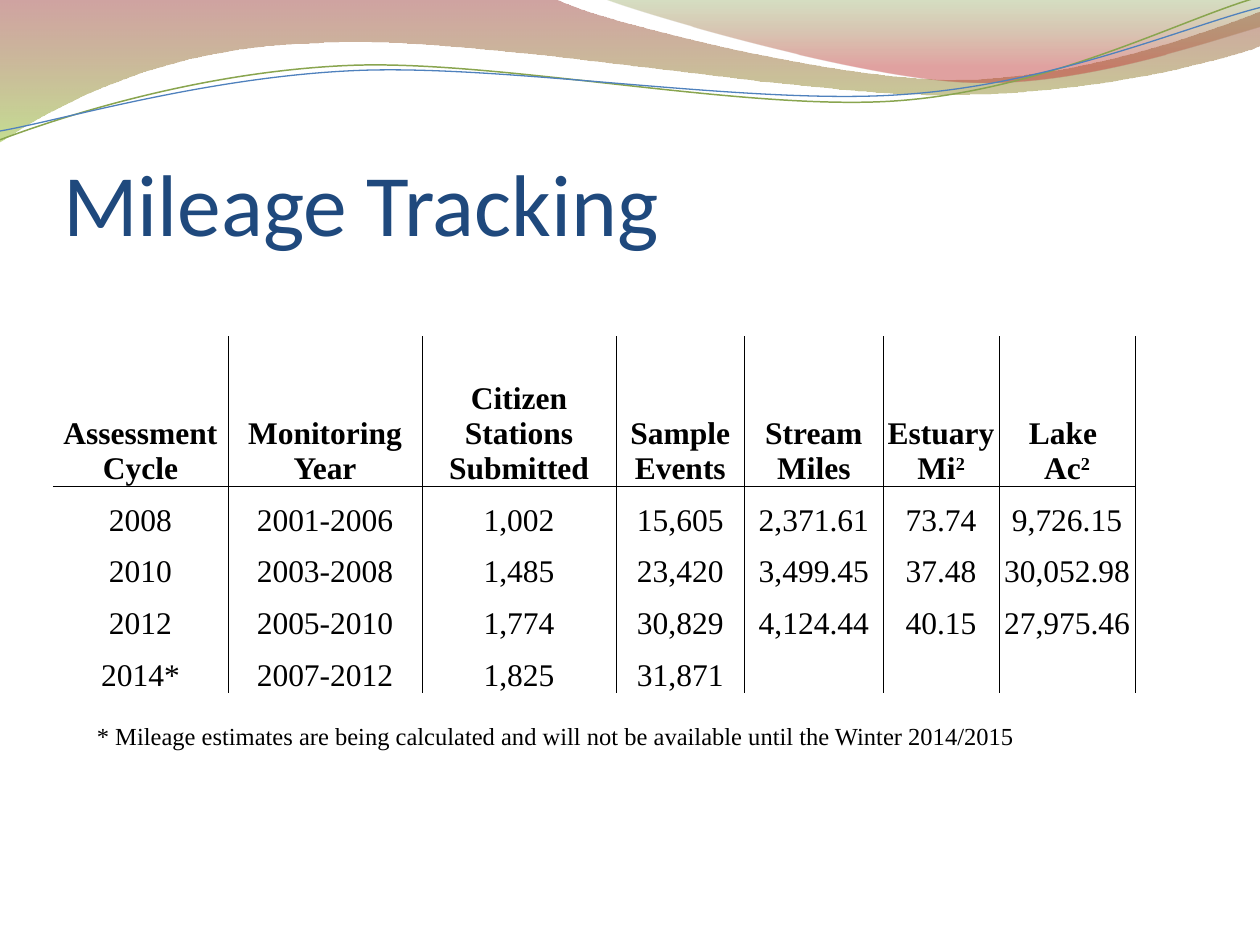
from lxml import etree
from pptx import Presentation
from pptx.dml.color import RGBColor
from pptx.enum import text
from pptx.oxml import ns
from pptx.util import Inches, Pt

NAVY = RGBColor(0x1F, 0x49, 0x7D)
BLACK = RGBColor(0, 0, 0)
MAROON = RGBColor(0x97, 0x33, 0x30)
LIME = RGBColor(0x95, 0xC2, 0x38)
OLIVE = RGBColor(0x76, 0x95, 0x37)
RED = RGBColor(0xBE, 0x33, 0x30)
GREEN = RGBColor(0x89, 0xA5, 0x4F)
BLUE = RGBColor(0x4F, 0x81, 0xBD)
SERIF = "Times New Roman"
NO_GRID = "{2D5ABB26-0587-4C30-8999-92F81FD0307C}"

# Each band or line is a start point, then points (2 numbers) or curves (6)
LEFT_BAND = [(0, 0), (4.4, -0.01), (4.76, 0.17, 6.64, 0.63, 7.58, 0.63),
             (8.53, 0.63, 9.58, 0.26, 10, 0.09), (10.01, 0.36),
             (9.83, 0.44, 8.7, 0.76, 7.46, 0.75),
             (6.22, 0.75, 3.82, 0.28, 2.57, 0.34),
             (1.29, 0.36, 0.46, 0.83, -0.01, 1.13)]
RIGHT_BAND = [(4.79, -0.01), (5.09, 0.11, 6.82, 0.62, 7.69, 0.65),
              (8.56, 0.69, 9.61, 0.32, 10, 0.21), (10, 0)]
GREEN_LINE = [(0, 1.11), (0.48, 0.93, 1.58, 0.57, 2.77, 0.52),
              (3.95, 0.47, 5.93, 0.89, 7.13, 0.8),
              (8.33, 0.71, 9.38, 0.15, 9.98, -0.02)]
BLUE_LINE = [(0, 1.04), (0.47, 0.96, 1.64, 0.61, 2.83, 0.56),
             (4.03, 0.51, 5.97, 0.84, 7.17, 0.75),
             (8.36, 0.67, 9.41, 0.21, 10, 0.06)]

# A caret marks the superscript that ends a line
ROWS = [
    ["Assessment Cycle", "Monitoring Year", "Citizen Stations Submitted",
     "Sample Events", "Stream Miles", "Estuary Mi^2", "Lake \nAc^2"],
    ["2008", "2001-2006", "1,002", "15,605", "2,371.61", "73.74", "9,726.15"],
    ["2010", "2003-2008", "1,485", "23,420", "3,499.45", "37.48", "30,052.98"],
    ["2012", "2005-2010", "1,774", "30,829", "4,124.44", "40.15", "27,975.46"],
    ["2014*", "2007-2012", "1,825", "31,871", "", "", ""],
]
WIDTHS = [1.39, 1.54, 1.54, 1.02, 1.1, 0.92, 1.08]
HEIGHTS = [1.19] + [0.41] * 4


def add_path(slide, parts, close):
    """Build the outline through its end points, then bend the curved parts."""
    ends = [(Inches(p[-2]), Inches(p[-1])) for p in parts]
    pen = slide.shapes.build_freeform(*ends[0], scale=1.0)
    pen.add_line_segments(ends[1:], close=close)
    shape = pen.convert_to_shape()
    shape.shadow.inherit = False
    for seg, part in zip(shape._element.xpath(".//a:lnTo"), parts[1:]):
        if len(part) == 6:
            curve = etree.Element(ns.qn("a:cubicBezTo"))
            for x, y in zip(part[::2], part[1::2]):
                etree.SubElement(curve, ns.qn("a:pt"),
                                 x=str(Inches(x) - shape.left),
                                 y=str(Inches(y) - shape.top))
            seg.getparent().replace(seg, curve)
    return shape


def add_band(slide, parts, stops):
    """Draw a filled wave; stops are (position, colour, opacity %)."""
    band = add_path(slide, parts, True)
    band.line.fill.background()
    band.fill.gradient()
    band.fill.gradient_angle = 270
    for stop, (pos, color, _) in zip(band.fill.gradient_stops, stops):
        stop.position = pos
        stop.color.rgb = color
    for tint, (_, _, alpha) in zip(band._element.xpath(".//a:gs/a:srgbClr"), stops):
        etree.SubElement(tint, ns.qn("a:alpha"), val=str(alpha * 1000))


def add_line(slide, parts, color, width):
    line = add_path(slide, parts, False)
    line.fill.background()
    line.line.color.rgb = color
    line.line.width = Pt(width)


def set_font(para, name, size, color, bold=False):
    font = para.font
    font.name, font.size, font.bold = name, Pt(size), bold
    font.color.rgb = color


def set_pads(box, left, top, right, bottom):
    box.margin_left, box.margin_top = Inches(left), Inches(top)
    box.margin_right, box.margin_bottom = Inches(right), Inches(bottom)


def set_title(slide, words):
    title = slide.shapes.title
    title.left, title.top = Inches(0.5), Inches(0.77)
    title.width, title.height = Inches(9), Inches(1.25)
    frame = title.text_frame
    frame.text = words
    frame.vertical_anchor = text.MSO_ANCHOR.BOTTOM
    set_pads(frame, 0, 0.05, 0, 0)
    para = frame.paragraphs[0]
    para.alignment = text.PP_ALIGN.LEFT
    set_font(para, "Calibri", 50, NAVY)
    # Bring the title in front of the waves
    slide.shapes._spTree.append(title._element)


def set_edges(cell, shown):
    """Rule the shown sides and clear the others."""
    props = cell._tc.get_or_add_tcPr()
    for i, side in enumerate("LRTB"):
        edge = etree.Element(ns.qn("a:ln" + side), w=str(Pt(0.5)))
        if side in shown:
            fill = etree.SubElement(edge, ns.qn("a:solidFill"))
            etree.SubElement(fill, ns.qn("a:srgbClr"), val=str(BLACK))
        else:
            etree.SubElement(edge, ns.qn("a:noFill"))
        props.insert(i, edge)


def fill_cell(cell, words, head):
    cell.fill.background()
    cell.vertical_anchor = text.MSO_ANCHOR.BOTTOM
    set_pads(cell, 0.01, 0.01, 0.01, 0)
    frame = cell.text_frame
    for i, line in enumerate(words.split("\n")):
        para = frame.add_paragraph() if i else frame.paragraphs[0]
        para.alignment = text.PP_ALIGN.CENTER
        set_font(para, SERIF, 18, BLACK, head)
        base, _, power = line.partition("^")
        if base:
            para.add_run().text = base
        if power:
            run = para.add_run()
            run.text = power
            run.font._element.set("baseline", "30000")


def add_grid(slide):
    table = slide.shapes.add_table(
        len(ROWS), len(WIDTHS), Inches(0.42), Inches(2.67),
        Inches(sum(WIDTHS)), Inches(sum(HEIGHTS))).table
    table.first_row = table.horz_banding = False
    table._tbl.tblPr.find(ns.qn("a:tableStyleId")).text = NO_GRID
    for col, width in zip(table.columns, WIDTHS):
        col.width = Inches(width)
    for row, height in zip(table.rows, HEIGHTS):
        row.height = Inches(height)
    for r, row in enumerate(ROWS):
        for c, words in enumerate(row):
            cell = table.cell(r, c)
            fill_cell(cell, words, r == 0)
            sides = "LR" if c else "R"
            set_edges(cell, sides + {0: "B", 1: "T"}.get(r, ""))


def add_note(slide, words):
    box = slide.shapes.add_textbox(Inches(0.67), Inches(5.67),
                                   Inches(8.42), Inches(0.34))
    frame = box.text_frame
    frame.word_wrap = True
    frame.text = words
    set_font(frame.paragraphs[0], SERIF, 14, BLACK)


def main():
    deck = Presentation()
    deck.slide_width, deck.slide_height = Inches(10), Inches(7.5)
    slide = deck.slides.add_slide(deck.slide_layouts[5])

    # Waves along the top
    add_band(slide, LEFT_BAND, [(0, MAROON, 45), (1, LIME, 55)])
    add_band(slide, RIGHT_BAND, [(0, OLIVE, 30), (0.8, RED, 45)])
    add_line(slide, GREEN_LINE, GREEN, 0.85)
    add_line(slide, BLUE_LINE, BLUE, 0.75)

    # Content
    set_title(slide, "Mileage Tracking")
    add_grid(slide)
    add_note(slide, "* Mileage estimates are being calculated and will not "
                    "be available until the Winter 2014/2015")
    deck.save("out.pptx")


if __name__ == "__main__":
    main()
